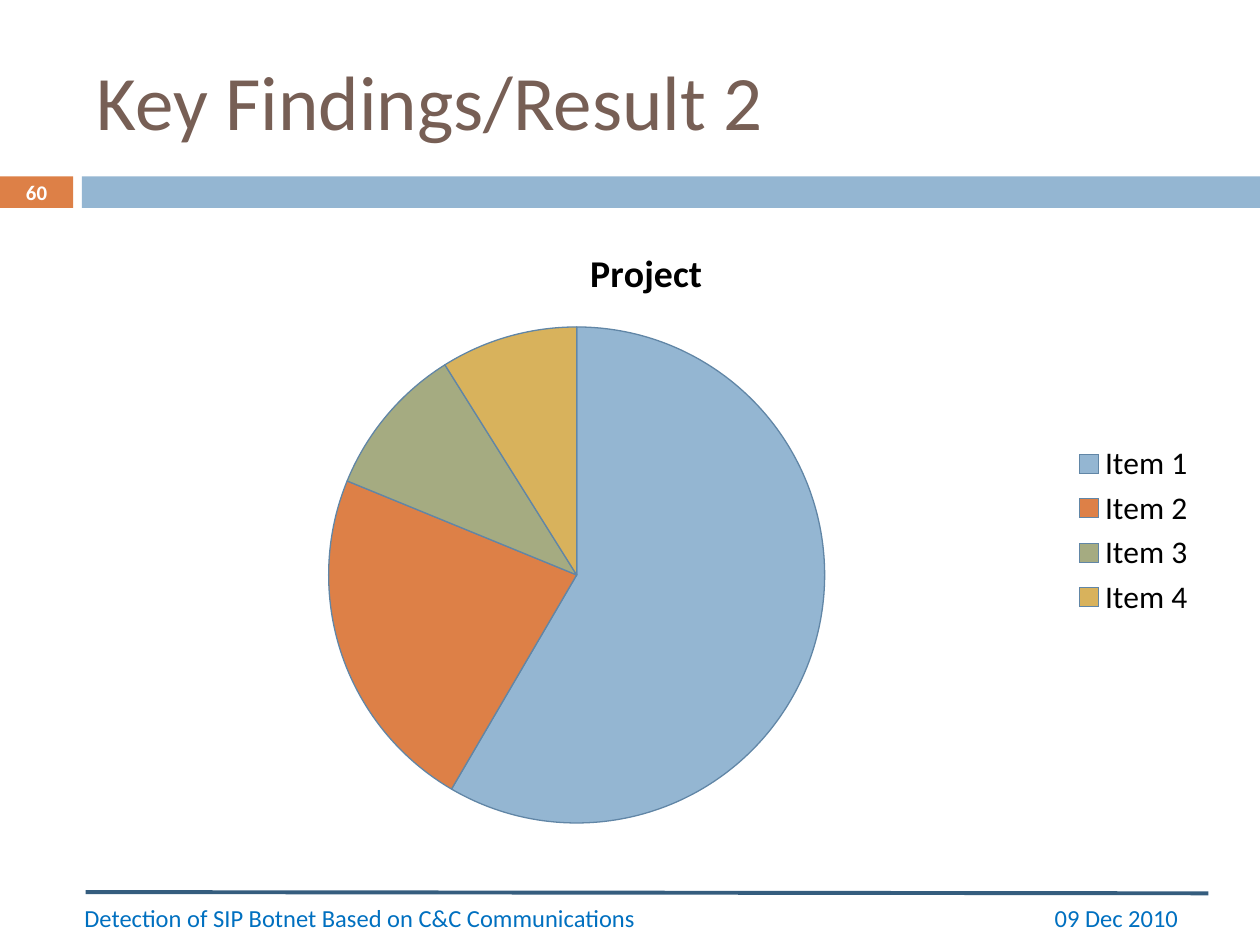
from pptx import Presentation
from pptx.chart.data import CategoryChartData
from pptx.dml.color import RGBColor
from pptx.enum.chart import XL_CHART_TYPE as ChartType, XL_LEGEND_POSITION as LegendPosition
from pptx.enum.shapes import MSO_CONNECTOR as Connector, MSO_SHAPE as Shape
from pptx.enum.text import MSO_ANCHOR as Anchor, PP_ALIGN as Align
from pptx.oxml.ns import qn
from pptx.util import Inches, Pt
from lxml import etree

FONT = "Calibri"
COLORS = {
    "blue": "94B6D2", "orange": "DD8047", "green": "A5AB81", "gold": "D8B25C",
    "outline": "6186A6", "rule": "355D7E", "title": "775F55",
    "footer": "0070C0", "white": "FFFFFF", "black": "000000",
}

# Content: bars (box, colour)
BARS = [
    ((0, 1.4, 0.58, 0.25), "orange"),
    ((0.65, 1.4, 9.35, 0.25), "blue"),
]
# Texts (text, box, left and right inset, size, colour, bold, alignment)
TEXTS = [
    ("Key Findings/Result 2", (0.67, 0.25, 8.92, 1.08), (0.1, 0.1), 44, "title", False, Align.LEFT),
    ("09 Dec 2010", (6.67, 7.08, 2.92, 0.4), (1.7, 0.1), 14, "footer", False, Align.LEFT),
    ("60", (0, 1.39, 0.58, 0.27), (0.1, 0.1), 11.9, "white", True, Align.CENTER),
    ("Detection of SIP Botnet Based on C&C Communications", (0.67, 7.08, 5.93, 0.4),
     (0, 0.1), 14, "footer", False, Align.LEFT),
]
CHART_TITLE = "Project"
CHART_BOX = (0.67, 1.75, 8.92, 4.92)
SLICES = [("Item 1", 59, "blue"), ("Item 2", 23, "orange"),
          ("Item 3", 10, "green"), ("Item 4", 9, "gold")]


def rgb(name):
    return RGBColor.from_string(COLORS[name])


def inches(box):
    return [Inches(length) for length in box]


def style_font(font, size, color, bold=False):
    font.name = FONT
    font.size = Pt(size)
    font.bold = bold
    font.color.rgb = rgb(color)


def add_bar(slide, box, color):
    bar = slide.shapes.add_shape(Shape.RECTANGLE, *inches(box))
    bar.shadow.inherit = False
    bar.fill.solid()
    bar.fill.fore_color.rgb = rgb(color)
    bar.line.fill.background()


def add_text(slide, text, box, insets, size, color, bold, alignment):
    frame = slide.shapes.add_textbox(*inches(box)).text_frame
    frame.word_wrap = True
    frame.vertical_anchor = Anchor.MIDDLE
    frame.margin_left, frame.margin_right = inches(insets)
    frame.text = text
    paragraph = frame.paragraphs[0]
    paragraph.alignment = alignment
    style_font(paragraph.runs[0].font, size, color, bold)


def add_rule(slide):
    rule = slide.shapes.add_connector(Connector.STRAIGHT, *inches((0.68, 7.08, 9.59, 7.09)))
    rule.line.color.rgb = rgb("rule")
    rule.line.width = Pt(2.25)
    etree.SubElement(rule.line._get_or_add_ln().getparent(), qn("a:effectLst"))


def add_pie(slide):
    data = CategoryChartData()
    data.categories = [name for name, _, _ in SLICES]
    data.add_series(CHART_TITLE, [value for _, value, _ in SLICES])
    chart = slide.shapes.add_chart(ChartType.PIE, *inches(CHART_BOX), data).chart
    style_font(chart.font, 18, "black")

    # Title and legend
    chart.has_title = True
    title_frame = chart.chart_title.text_frame
    title_frame.text = CHART_TITLE
    style_font(title_frame.paragraphs[0].runs[0].font, 21.6, "black", True)
    chart.has_legend = True
    chart.legend.position = LegendPosition.RIGHT
    chart.legend.include_in_layout = False

    # Slices
    plot = chart.plots[0]
    plot.vary_by_categories = True
    for index, (_, _, color) in enumerate(SLICES):
        slice_format = plot.series[0].points[index].format
        slice_format.fill.solid()
        slice_format.fill.fore_color.rgb = rgb(color)
        slice_format.line.color.rgb = rgb("outline")
        slice_format.line.width = Pt(0.75)


def main():
    presentation = Presentation()
    presentation.slide_width, presentation.slide_height = Inches(10), Inches(7.5)
    slide = presentation.slides.add_slide(presentation.slide_layouts[6])
    for bar in BARS:
        add_bar(slide, *bar)
    add_rule(slide)
    add_pie(slide)
    for text in TEXTS:
        add_text(slide, *text)
    presentation.save("out.pptx")


if __name__ == "__main__":
    main()
